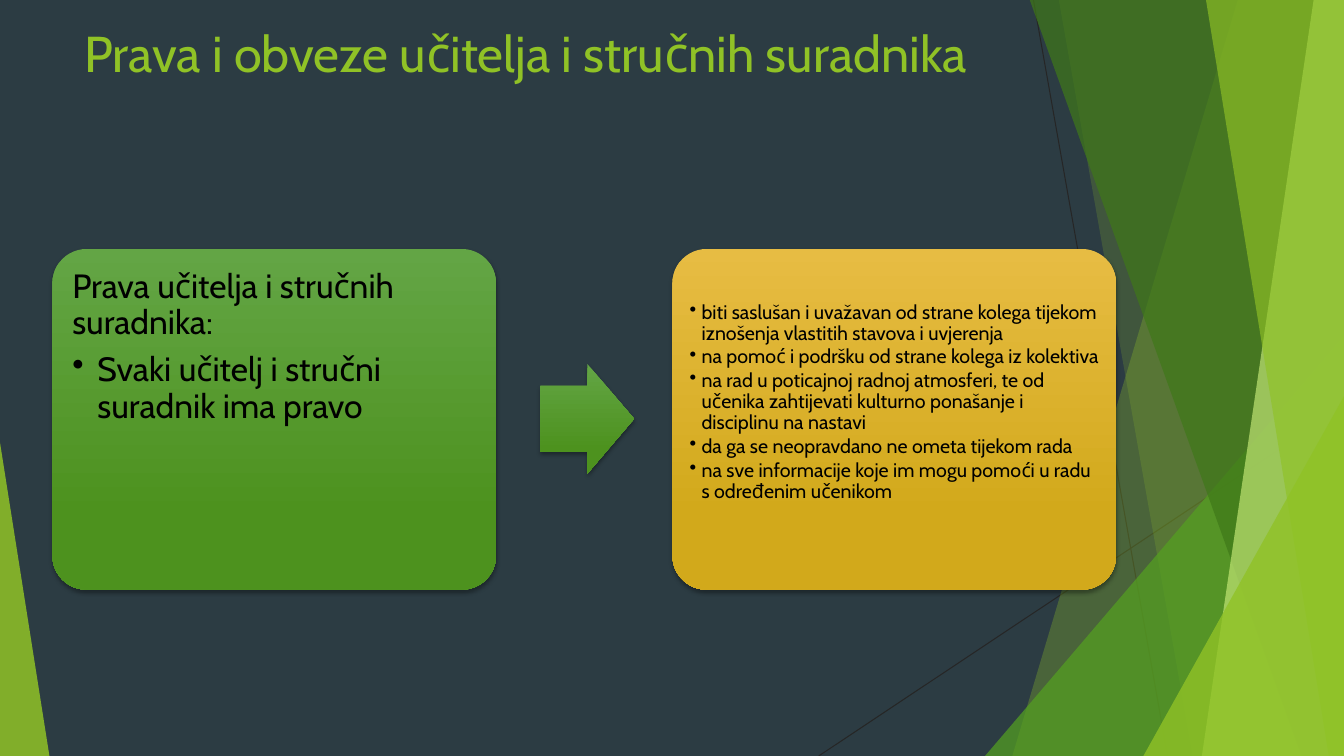
from dataclasses import dataclass

import lxml.etree
import pptx
import pptx.dml.color
import pptx.enum.shapes
import pptx.enum.text
import pptx.oxml.ns
import pptx.shapes.autoshape
import pptx.slide
import pptx.text.text
import pptx.util

Inches = pptx.util.Inches
SHAPE = pptx.enum.shapes.MSO_SHAPE
qn = pptx.oxml.ns.qn

FONT = "Cabin"
WIDTH, HEIGHT = 13.33, 7.5
FACET_TOP = -0.01
COLORS = {
    "background": "2C3C43",
    "ray": "262626",
    "lime": "90C226",
    "green": "54A021",
    "forest": "3F7819",
    "pale": "C0E474",
    "text": "000000",
    "green_light": "63A545",
    "green_dark": "4D921E",
    "gold_light": "E7BC43",
    "gold_dark": "D2A91B",
}


@dataclass
class Ray:
    start: tuple[float, float]
    end: tuple[float, float]


@dataclass
class Facet:
    top_x: float
    bottom_x: float
    color: str
    opacity: int


@dataclass
class Corner:
    left: float
    top: float
    width: float
    apex: float
    color: str
    opacity: int


@dataclass
class Line:
    text: str
    size: float
    space_after: float
    indent: float = 0


@dataclass
class Block:
    kind: SHAPE
    box: tuple[float, float, float, float]
    adjustments: list[float]
    hue: str
    lines: list[Line]
    inset: float = 0.1
    top_inset: float = 0.1


RAYS = [Ray((10.25, 0), (11.58, HEIGHT)), Ray((WIDTH, 4.03), (8.12, HEIGHT))]

DECOR = [
    Facet(12.28, 10.04, "lime", 30),
    Facet(10.5, 11.83, "lime", 20),
    Corner(9.77, 3.33, 3.56, 1, "green", 72),
    Facet(10.21, 12.91, "forest", 70),
    Facet(13.03, 11.92, "pale", 70),
    Facet(11.96, 13.18, "lime", 65),
    Corner(11.34, 3.93, 1.99, 1, "lime", 80),
    Corner(0, 4.39, 0.49, 0, "lime", 85),
]

RIGHTS = [
    "biti saslušan i uvažavan od strane kolega tijekom iznošenja vlastitih stavova i uvjerenja",
    "na pomoć i podršku od strane kolega iz kolektiva",
    "na rad u poticajnoj radnoj atmosferi, te od učenika zahtijevati kulturno ponašanje i disciplinu na nastavi",
    "da ga se neopravdano ne ometa tijekom rada",
    "na sve informacije koje im mogu pomoći u radu s određenim učenikom",
]

BLOCKS = [
    Block(SHAPE.ROUNDED_RECTANGLE, (0.52, 2.47, 4.4, 3.38), [0.1], "green", [
        Line("Prava učitelja i stručnih suradnika:", 24, 8),
        Line("Svaki učitelj i stručni suradnik ima pravo", 24, 3.5, 0.25),
    ]),
    Block(SHAPE.RIGHT_ARROW, (5.36, 3.61, 0.93, 1.09), [0.6, 0.5], "green", []),
    Block(SHAPE.ROUNDED_RECTANGLE, (6.67, 2.47, 4.4, 3.38), [0.1], "gold",
          [Line(right, 14, 1.7, 0.12) for right in RIGHTS], 0.07, 0.43),
]


def rgb(name: str) -> pptx.dml.color.RGBColor:
    return pptx.dml.color.RGBColor.from_string(COLORS[name])


def add_ray(slide: pptx.slide.Slide, ray: Ray) -> None:
    ends = [Inches(value) for value in ray.start + ray.end]
    connector = slide.shapes.add_connector(pptx.enum.shapes.MSO_CONNECTOR.STRAIGHT, *ends)
    connector.line.color.rgb = rgb("ray")
    connector.line.width = pptx.util.Pt(0.75)
    lxml.etree.SubElement(connector._element.spPr, qn("a:effectLst"))


def add_decor(slide: pptx.slide.Slide, part: Facet | Corner) -> None:
    if isinstance(part, Facet):
        corners = [(part.top_x, FACET_TOP), (WIDTH, FACET_TOP),
                   (WIDTH, HEIGHT), (part.bottom_x, HEIGHT)]
        start, *rest = [(Inches(x), Inches(y)) for x, y in corners]
        outline = slide.shapes.build_freeform(*start)
        outline.add_line_segments(rest, close=True)
        shape = outline.convert_to_shape()
    else:
        box = (part.left, part.top, part.width, HEIGHT - part.top)
        shape = slide.shapes.add_shape(SHAPE.ISOSCELES_TRIANGLE, *map(Inches, box))
        shape.adjustments[0] = part.apex
    shape.shadow.inherit = False
    shape.line.fill.background()
    shape.fill.solid()
    shape.fill.fore_color.rgb = rgb(part.color)
    color = shape._element.spPr.find(qn("a:solidFill"))[0]
    lxml.etree.SubElement(color, qn("a:alpha"), val=str(part.opacity * 1000))


def add_shadow(shape: pptx.shapes.autoshape.Shape) -> None:
    shape.shadow.inherit = False
    effects = shape._element.spPr.find(qn("a:effectLst"))
    shadow = lxml.etree.SubElement(
        effects, qn("a:outerShdw"), blurRad=str(pptx.util.Pt(3)),
        dist=str(pptx.util.Pt(2)), dir="5400000", rotWithShape="0")
    color = lxml.etree.SubElement(shadow, qn("a:srgbClr"), val=COLORS["text"])
    lxml.etree.SubElement(color, qn("a:alpha"), val="35000")


def set_font(paragraph: pptx.text.text._Paragraph, size: float, color: str) -> None:
    paragraph.alignment = pptx.enum.text.PP_ALIGN.LEFT
    paragraph.font.name = FONT
    paragraph.font.size = pptx.util.Pt(size)
    paragraph.font.color.rgb = rgb(color)


def write_line(paragraph: pptx.text.text._Paragraph, line: Line) -> None:
    paragraph.text = line.text
    paragraph.line_spacing = 0.9
    paragraph.space_after = pptx.util.Pt(line.space_after)
    if line.indent:
        properties = paragraph._p.get_or_add_pPr()
        properties.set("marL", str(Inches(line.indent)))
        properties.set("indent", str(-Inches(line.indent)))
        lxml.etree.SubElement(properties, qn("a:buChar"), char="•")
    set_font(paragraph, line.size, "text")


def add_block(slide: pptx.slide.Slide, block: Block) -> None:
    shape = slide.shapes.add_shape(block.kind, *map(Inches, block.box))
    for index, value in enumerate(block.adjustments):
        shape.adjustments[index] = value
    shape.line.fill.background()
    shape.fill.gradient()
    shape.fill.gradient_angle = 270
    stops = [(0, "light"), (0.78, "dark")]
    for stop, (position, shade) in zip(shape.fill.gradient_stops, stops):
        stop.position = position
        stop.color.rgb = rgb(f"{block.hue}_{shade}")
    add_shadow(shape)
    frame = shape.text_frame
    frame.word_wrap = True
    frame.vertical_anchor = pptx.enum.text.MSO_ANCHOR.TOP
    frame.margin_left = frame.margin_right = frame.margin_bottom = Inches(block.inset)
    frame.margin_top = Inches(block.top_inset)
    for index, line in enumerate(block.lines):
        write_line(frame.add_paragraph() if index else frame.paragraphs[0], line)


def add_title(slide: pptx.slide.Slide) -> None:
    title = slide.shapes.add_textbox(*map(Inches, (0.74, 0.17, 9.4, 1.44))).text_frame
    title.word_wrap = True
    title.text = "Prava i obveze učitelja i stručnih suradnika"
    set_font(title.paragraphs[0], 36, "lime")


def main() -> None:
    presentation = pptx.Presentation()
    presentation.slide_width = Inches(WIDTH)
    presentation.slide_height = Inches(HEIGHT)
    slide = presentation.slides.add_slide(presentation.slide_layouts[6])
    slide.background.fill.solid()
    slide.background.fill.fore_color.rgb = rgb("background")
    for ray in RAYS:
        add_ray(slide, ray)
    for part in DECOR:
        add_decor(slide, part)
    add_title(slide)
    for block in BLOCKS:
        add_block(slide, block)
    presentation.save("out.pptx")


if __name__ == "__main__":
    main()
